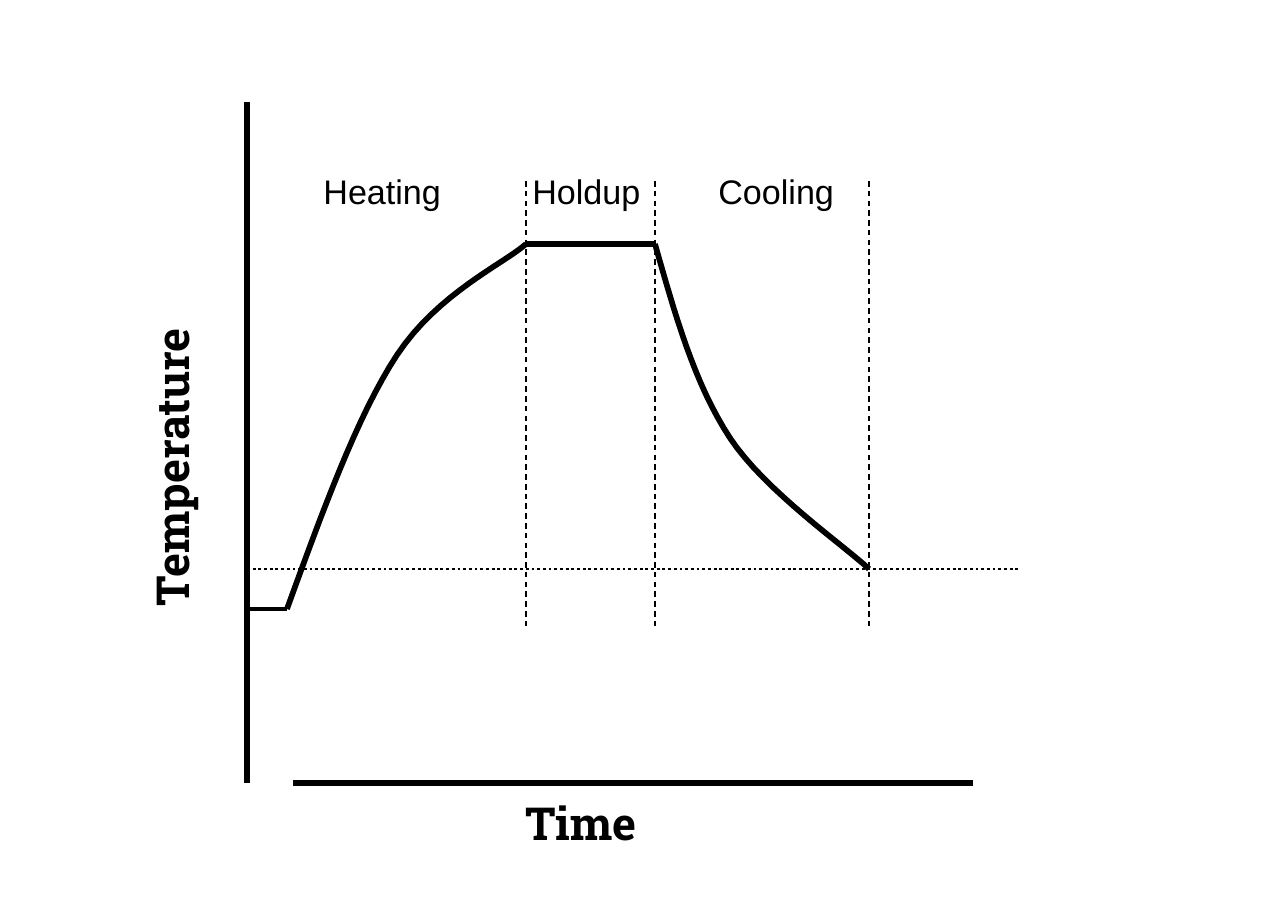
"""Build a slide that plots temperature over time for heating, holdup and cooling."""
from lxml.etree import SubElement
from pptx import Presentation
from pptx.dml.color import RGBColor
from pptx.enum.dml import MSO_LINE as Dash
from pptx.enum.shapes import MSO_CONNECTOR as Link
from pptx.enum.text import MSO_AUTO_SIZE as Fit, MSO_ANCHOR as Anchor
from pptx.enum.text import PP_ALIGN as Align
from pptx.oxml.ns import qn
from pptx.util import Pt

SCALE = 914400 / 136.4
BLACK = "000000"
STEPS = 16

AXIS, RIGHT = 247, 1020
START, PEAK, HOLD, END = 287, 526, 655, 869
HOT, ROOM, COLD = 244, 569, 609

HEAT = [(START, COLD), (322, 513), (357, 416), (397, 355),
        (438, 293), (505, 263), (PEAK, HOT)]
COOL = [(HOLD, HOT), (675, 314), (694, 383), (730, 438),
        (765, 491), (846, 547), (END, ROOM)]
PHASES = [("Heating", 310, 147), ("Holdup", 519, 138), ("Cooling", 705, 148)]


def px(size):
    return round(size * SCALE)


def paint(color, value):
    color.rgb = RGBColor.from_string(value)


def ink(line, width, dash=None):
    paint(line.color, BLACK)
    line.width = Pt(width)
    if dash is not None:
        line.dash_style = dash


def rule(slide, x1, y1, x2, y2, width, dash=None):
    line = slide.shapes.add_connector(
        Link.STRAIGHT, px(x1), px(y1), px(x2), px(y2))
    ink(line.line, width, dash)
    SubElement(line._element.spPr, qn("a:effectLst"))


def cubic(a, b, c, d, t):
    u = 1 - t
    return tuple(u**3 * p + 3 * u * u * t * q + 3 * u * t * t * r + t**3 * s
                 for p, q, r, s in zip(a, b, c, d))


def curve(slide, knots, width):
    dots = [cubic(*knots[i:i + 4], step / STEPS)
            for i in range(0, len(knots) - 1, 3)
            for step in range(1, STEPS + 1)]
    x, y = knots[0]
    pen = slide.shapes.build_freeform(px(x), px(y))
    pen.add_line_segments([(px(x), px(y)) for x, y in dots], close=False)
    shape = pen.convert_to_shape()
    shape.shadow.inherit = False
    shape.fill.background()
    ink(shape.line, width)


def label(slide, text, box, size, face, bold=False, turn=0):
    shape = slide.shapes.add_textbox(*map(px, box))
    shape.rotation = turn
    frame = shape.text_frame
    frame.text = text
    frame.word_wrap = False
    frame.auto_size = Fit.SHAPE_TO_FIT_TEXT
    frame.vertical_anchor = Anchor.TOP
    para = frame.paragraphs[0]
    para.alignment = Align.LEFT
    font = para.runs[0].font
    font.name, font.size, font.bold = face, Pt(size), bold
    paint(font.color, BLACK)


def main():
    deck = Presentation()
    deck.slide_width, deck.slide_height = px(1288), px(915)
    slide = deck.slides.add_slide(deck.slide_layouts[6])

    rule(slide, AXIS, 102, AXIS, 783, 3)
    rule(slide, 293, 783, 973, 783, 3)

    curve(slide, HEAT, 3)
    rule(slide, PEAK, HOT, HOLD, HOT, 3)
    curve(slide, COOL, 3)
    rule(slide, AXIS, COLD, START, COLD, 2.25)

    rule(slide, AXIS, ROOM, RIGHT, ROOM, 1.5, Dash.ROUND_DOT)
    for x in (PEAK, HOLD, END):
        rule(slide, x, 181, x, 629, 0.75, Dash.DASH)

    label(slide, "Time", (512, 788, 147, 68), 24, "Roboto Slab", True)
    label(slide, "Temperature", (5, 419, 333, 68), 24, "Roboto Slab", True, 270)
    for name, x, width in PHASES:
        label(slide, name, (x, 164, width, 55), 18, "Arial")

    deck.save("out.pptx")


if __name__ == "__main__":
    main()
